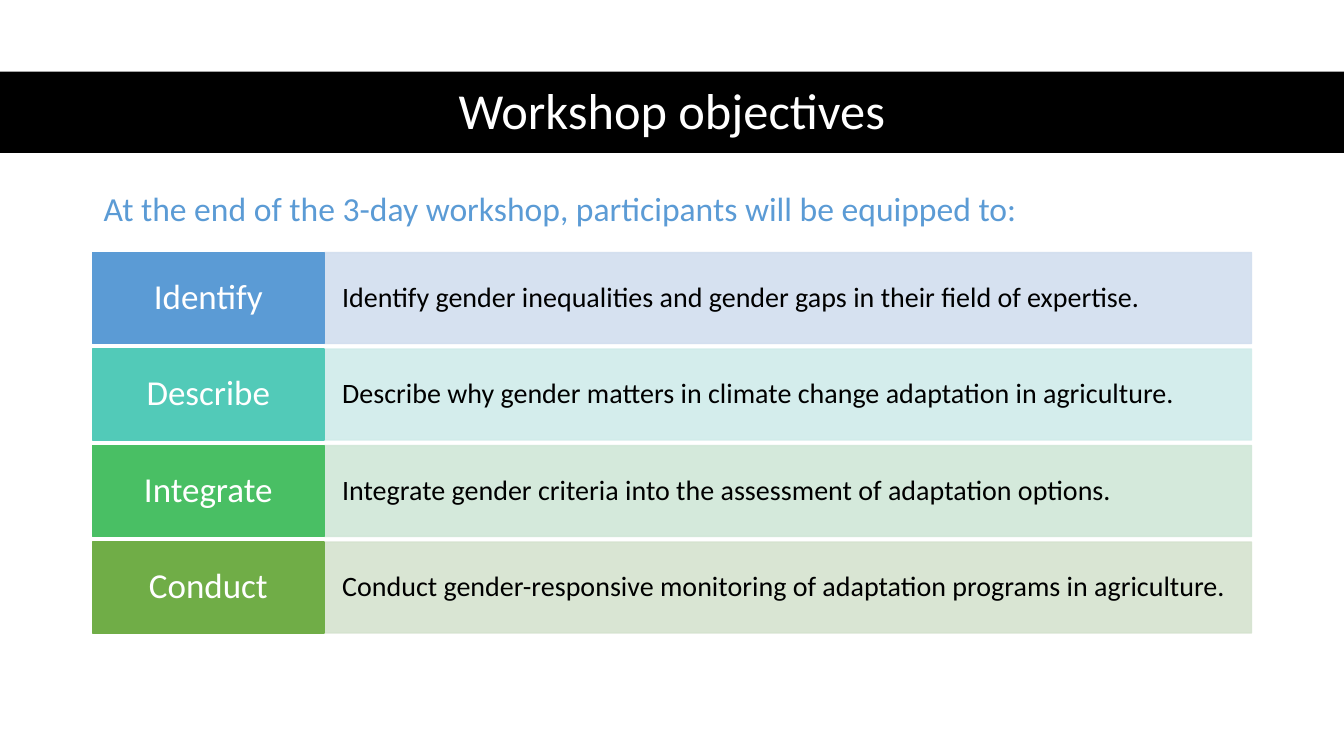
from lxml import etree
from pptx import Presentation
from pptx.dml.color import RGBColor
from pptx.enum import shapes, text
from pptx.oxml.ns import qn
from pptx.util import Pt

BLACK = RGBColor(0x00, 0x00, 0x00)
WHITE = RGBColor(0xFF, 0xFF, 0xFF)
BLUE = RGBColor(0x5B, 0x9B, 0xD5)
TEAL = RGBColor(0x52, 0xCA, 0xB8)
GREEN = RGBColor(0x49, 0xBF, 0x64)
OLIVE = RGBColor(0x70, 0xAD, 0x47)
PALE_BLUE = RGBColor(0xD2, 0xDE, 0xEF)
PALE_TEAL = RGBColor(0xD0, 0xEC, 0xEA)
PALE_GREEN = RGBColor(0xD0, 0xE7, 0xD8)
PALE_OLIVE = RGBColor(0xD5, 0xE3, 0xCF)

SLIDE_W, SLIDE_H = 960, 540
LEFT, CENTER = text.PP_ALIGN.LEFT, text.PP_ALIGN.CENTER

OBJECTIVES = [
    ("Identify", "Identify gender inequalities and gender gaps in their field of expertise.",
     BLUE, PALE_BLUE),
    ("Describe", "Describe why gender matters in climate change adaptation in agriculture.",
     TEAL, PALE_TEAL),
    ("Integrate", "Integrate gender criteria into the assessment of adaptation options.",
     GREEN, PALE_GREEN),
    ("Conduct", "Conduct gender-responsive monitoring of adaptation programs in agriculture.",
     OLIVE, PALE_OLIVE),
]


def write(sp, words, size, color, align=LEFT, spacing=0.9, wrap=True, inset=(7.2, 3.6),
          anchor=text.MSO_ANCHOR.MIDDLE):
    tf = sp.text_frame
    side, edge = (Pt(v) for v in inset)
    frame = {"word_wrap": wrap, "vertical_anchor": anchor, "margin_left": side,
             "margin_right": side, "margin_top": edge, "margin_bottom": edge}
    p = tf.paragraphs[0]
    r = p.add_run()
    r.text = words
    r.font.color.rgb = color
    for target, values in (
        (tf, frame),
        (p, {"alignment": align, "line_spacing": spacing}),
        (r.font, {"name": "Calibri", "size": Pt(size)}),
    ):
        for name, value in values.items():
            setattr(target, name, value)


def add_rect(slide, box, color, outlined=True, opacity=100):
    sp = slide.shapes.add_shape(shapes.MSO_SHAPE.RECTANGLE, *map(Pt, box))
    sp.shadow.inherit = False
    sp.fill.solid()
    sp.fill.fore_color.rgb = color
    if outlined:
        sp.line.color.rgb = color
        sp.line.width = Pt(1)
    else:
        sp.line.fill.background()
    if opacity < 100:
        for clr in sp._element.spPr.iter(qn("a:srgbClr")):
            etree.SubElement(clr, qn("a:alpha")).set("val", str(opacity * 1000))
    return sp


def add_title(slide, x, y, w, h):
    # Full-width band with the title over it
    add_rect(slide, (x, y, w, h), BLACK, outlined=False)
    margin = 66
    sp = slide.shapes.add_textbox(Pt(x + margin), Pt(y + 2), Pt(w - 2 * margin), Pt(h - 2))
    write(sp, "Workshop objectives", 36, WHITE, CENTER)


def add_intro(slide, x, y, w, h):
    sp = slide.shapes.add_textbox(Pt(x), Pt(y), Pt(w), Pt(h))
    write(sp, "At the end of the 3-day workshop, participants will be equipped to:",
          24, BLUE, spacing=1, wrap=False, anchor=text.MSO_ANCHOR.TOP)


def add_objectives(slide, x, y, w, h):
    # One row per objective: verb on the left fifth, sentence on the rest
    gap = 4
    row_h = (h - gap * (len(OBJECTIVES) - 1)) / len(OBJECTIVES)
    verb_w = w / 5
    for i, (verb, sentence, strong, pale) in enumerate(OBJECTIVES):
        top = y + i * (row_h + gap)
        panel = add_rect(slide, (x + verb_w, top, w - verb_w, row_h), pale, opacity=90)
        write(panel, sentence, 20, BLACK, inset=(12.8, 16.5))
        label = add_rect(slide, (x, top, verb_w, row_h), strong)
        write(label, verb, 25, WHITE, CENTER, inset=(8.9, 6.4))


def main():
    prs = Presentation()
    prs.slide_width, prs.slide_height = Pt(SLIDE_W), Pt(SLIDE_H)
    slide = prs.slides.add_slide(prs.slide_layouts[6])
    add_title(slide, 0, 51.2, SLIDE_W, 58)
    add_objectives(slide, 66, 180.5, 828, 271.6)
    add_intro(slide, 67, 130.5, 667.5, 36)
    prs.save("out.pptx")


if __name__ == "__main__":
    main()
